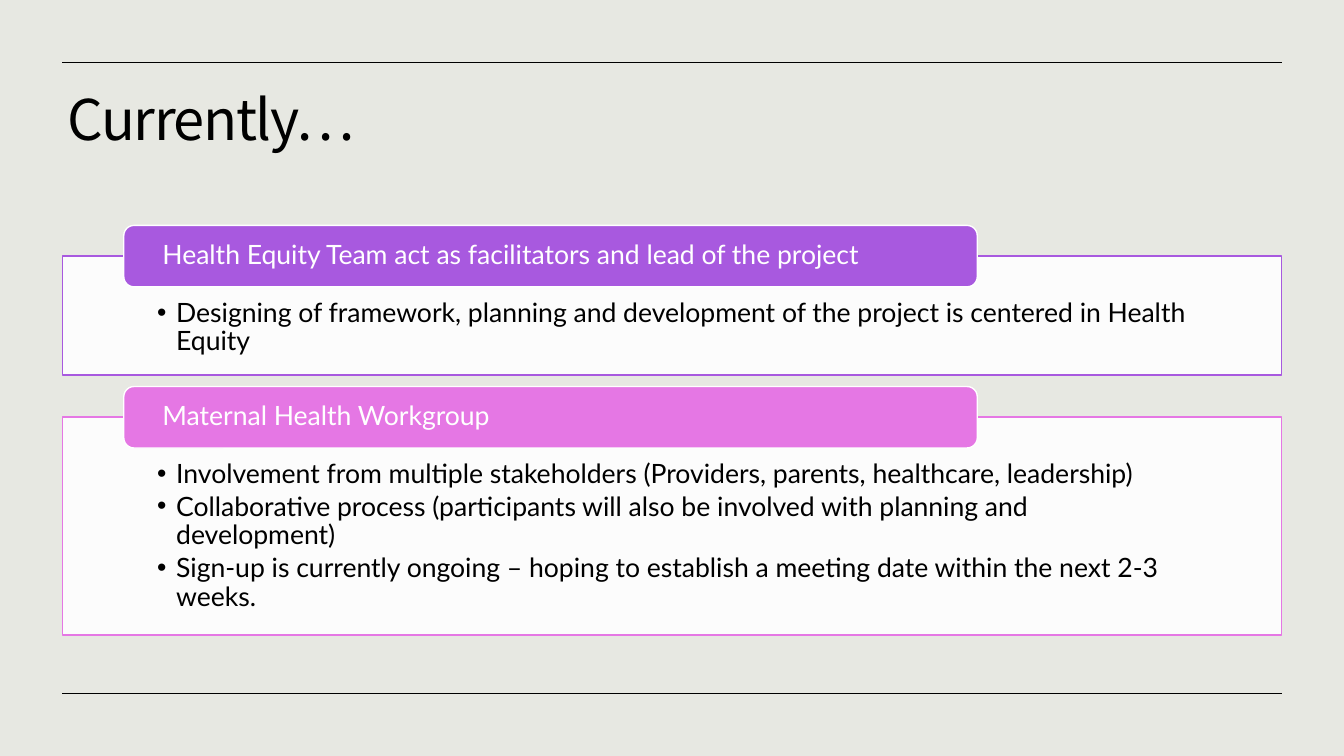
from lxml import etree
from pptx import Presentation
from pptx import util as u
from pptx.dml.color import RGBColor
from pptx.enum import shapes, text
from pptx.oxml import ns

COLOURS = {
    "background": "E7E8E2",
    "ink": "000000",
    "paper": "FFFFFF",
    "violet": "A859DF",
    "pink": "E577E4",
}
TITLE_FONT, BODY_FONT = "Noto Sans CJK KR", "Lato"
LEFT, WIDTH = 1.57, 30.73
HEADER_RISE = 0.77  # how far a header stands above its panel

# Header, colour, panel top, panel height, bullets
SECTIONS = [
    ("Health Equity Team act as facilitators and lead of the project",
     "violet", 6.45, 3.0,
     ["Designing of framework, planning and development of the project "
      "is centered in Health Equity"]),
    ("Maternal Health Workgroup", "pink", 10.51, 5.49,
     ["Involvement from multiple stakeholders (Providers, parents, "
      "healthcare, leadership)",
      "Collaborative process (participants will also be involved with "
      "planning and development)",
      "Sign-up is currently ongoing – hoping to establish a meeting date "
      "within the next 2-3 weeks."]),
]


def rgb(name):
    return RGBColor.from_string(COLOURS[name])


def place(shape, left, top, width, height):
    shape.left, shape.top = u.Cm(left), u.Cm(top)
    shape.width, shape.height = u.Cm(width), u.Cm(height)


def paint(shape, fill, line, opacity=100):
    shape.fill.solid()
    shape.fill.fore_color.rgb = rgb(fill)
    shape.line.color.rgb = rgb(line)
    shape.line.width = u.Pt(1)
    if opacity < 100:
        colour = shape.fill._xPr.find(".//" + ns.qn("a:srgbClr"))
        etree.SubElement(colour, ns.qn("a:alpha"), val=str(opacity * 1000))


def set_frame(shape, insets, anchor):
    frame = shape.text_frame
    frame.word_wrap = True
    frame.auto_size = text.MSO_AUTO_SIZE.NONE
    frame.vertical_anchor = anchor
    (frame.margin_left, frame.margin_top,
     frame.margin_right, frame.margin_bottom) = map(u.Cm, insets)
    return frame


def write(para, words, size=19, font=BODY_FONT, colour="ink", after=0,
          bullet=False, tracking=None):
    para.alignment = text.PP_ALIGN.LEFT
    para.line_spacing = 0.9
    para.space_before, para.space_after = u.Pt(0), u.Pt(after)
    span = para.add_run()
    span.text = words
    span.font.size, span.font.name = u.Pt(size), font
    span.font.color.rgb = rgb(colour)
    if tracking is not None:
        span._r.get_or_add_rPr().set("spc", str(tracking * 100))
    if bullet:
        props = para._p.get_or_add_pPr()
        props.set("marL", str(u.Cm(0.48)))
        props.set("indent", str(-u.Cm(0.48)))
        etree.SubElement(props, ns.qn("a:buChar"), char="•")


def add_rule(page, top):
    rule = page.shapes.add_connector(
        shapes.MSO_CONNECTOR.STRAIGHT,
        u.Cm(LEFT + WIDTH), u.Cm(top), u.Cm(LEFT), u.Cm(top))
    rule.line.color.rgb = rgb("ink")
    rule.line.width = u.Pt(0.5)
    etree.SubElement(rule._element.spPr, ns.qn("a:effectLst"))


def fill_panel(panel, colour, top, height, bullets):
    place(panel, LEFT, top, WIDTH, height)
    paint(panel, "paper", colour, opacity=90)
    frame = set_frame(panel, (2.39, 1.09, 2.39, 0.38), text.MSO_ANCHOR.TOP)
    for number, words in enumerate(bullets):
        para = frame.add_paragraph() if number else frame.paragraphs[0]
        write(para, words, after=2.85, bullet=True)


def add_header(page, words, colour, panel_top):
    box = page.shapes.add_shape(
        shapes.MSO_SHAPE.ROUNDED_RECTANGLE, u.Cm(3.12),
        u.Cm(panel_top - HEADER_RISE), u.Cm(21.51), u.Cm(1.55))
    box.shadow.inherit = False
    paint(box, colour, "paper")
    frame = set_frame(box, (0.9, 0, 0.9, 0), text.MSO_ANCHOR.MIDDLE)
    write(frame.paragraphs[0], words, colour="paper")


def main():
    deck = Presentation()
    deck.slide_width, deck.slide_height = u.Cm(33.87), u.Cm(19.05)
    # The two-content layout gives a title and two lists
    page = deck.slides.add_slide(deck.slide_layouts.get_by_name("Two Content"))
    page.background.fill.solid()
    page.background.fill.fore_color.rgb = rgb("background")

    # Title
    title, *panels = page.placeholders
    place(title, 1.45, 2.18, 30.86, 2.92)
    frame = set_frame(title, (0.25, 0.13, 0.25, 0.13), text.MSO_ANCHOR.TOP)
    write(frame.paragraphs[0], "Currently…", size=40, font=TITLE_FONT,
          tracking=-1)

    # Rules above and below the content
    for top in (1.57, 17.48):
        add_rule(page, top)

    # Panels with their headers
    for panel, (header, colour, top, height, bullets) in zip(panels, SECTIONS):
        fill_panel(panel, colour, top, height, bullets)
        add_header(page, header, colour, top)

    deck.save("out.pptx")


if __name__ == "__main__":
    main()
